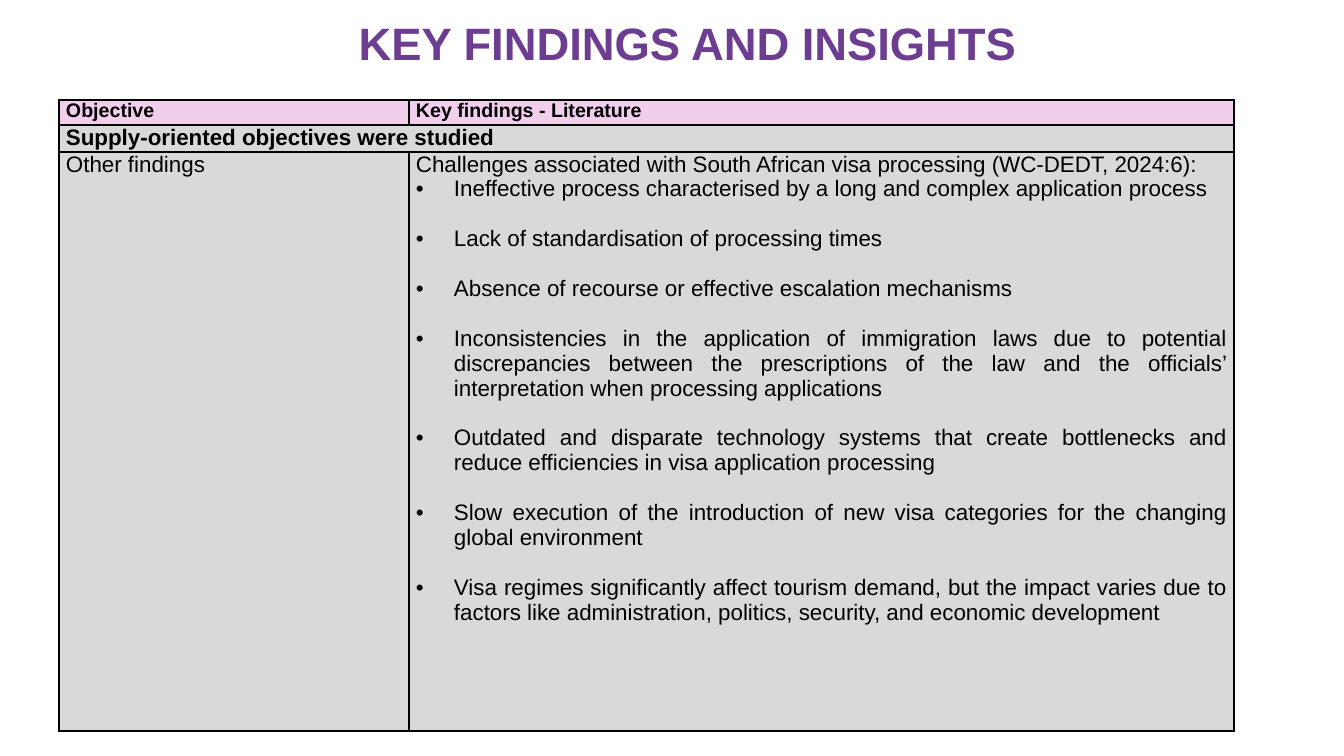
from pptx import Presentation
from pptx import util as u
from pptx.dml.color import RGBColor
from pptx.enum import text
from pptx.oxml.ns import qn
from lxml import etree

SCALE = 914400 / 100.8
COLORS = {"title": "6C3D91", "ink": "000000", "header": "F2CEED", "body": "D9D9D9"}
COLUMNS = [350, 825]
ROWS = [25, 27, 579]
BULLET_INDENT = 38
BULLET_GAP = 17.8
FINDINGS = [
    "Ineffective process characterised by a long and complex application process",
    "Lack of standardisation of processing times",
    "Absence of recourse or effective escalation mechanisms",
    "Inconsistencies in the application of immigration laws due to potential "
    "discrepancies between the prescriptions of the law and the officials’ "
    "interpretation when processing applications",
    "Outdated and disparate technology systems that create bottlenecks and "
    "reduce efficiencies in visa application processing",
    "Slow execution of the introduction of new visa categories for the changing "
    "global environment",
    "Visa regimes significantly affect tourism demand, but the impact varies due to "
    "factors like administration, politics, security, and economic development",
]


def px(n):
    return u.Emu(round(n * SCALE))


def apply(obj, values):
    for name, value in values.items():
        setattr(obj, name, value)


def write(p, words, size, color="ink", bold=False, align=text.PP_ALIGN.JUSTIFY):
    p.alignment = align
    r = p.add_run()
    r.text = words
    apply(r.font, {"name": "Arial", "size": u.Pt(size), "bold": bold})
    r.font.color.rgb = RGBColor.from_string(COLORS[color])


def add_bullet(p):
    pPr = p._p.get_or_add_pPr()
    pPr.set("marL", str(px(BULLET_INDENT)))
    pPr.set("indent", str(-px(BULLET_INDENT)))
    etree.SubElement(pPr, qn("a:buFont")).set("typeface", "Arial")
    etree.SubElement(pPr, qn("a:buChar")).set("char", "•")


def add_borders(cell):
    tcPr = cell._tc.get_or_add_tcPr()
    for side in ("lnL", "lnR", "lnT", "lnB"):
        ln = etree.SubElement(tcPr, qn(f"a:{side}"), w=str(u.Pt(1)))
        fill = etree.SubElement(ln, qn("a:solidFill"))
        etree.SubElement(fill, qn("a:srgbClr")).set("val", COLORS["ink"])


def format_cell(cell, fill):
    add_borders(cell)
    apply(cell, {"margin_left": px(7), "margin_right": px(7),
                 "margin_top": 0, "margin_bottom": 0})
    cell.fill.solid()
    cell.fill.fore_color.rgb = RGBColor.from_string(COLORS[fill])


def add_title(s, words):
    sp = s.shapes.title
    apply(sp, {"left": px(170), "top": px(19), "width": px(1035), "height": px(53)})
    tf = sp.text_frame
    apply(tf, {"margin_top": 0, "margin_bottom": 0, "word_wrap": True,
               "auto_size": text.MSO_AUTO_SIZE.NONE,
               "vertical_anchor": text.MSO_ANCHOR.MIDDLE})
    p = tf.paragraphs[0]
    p.line_spacing = 0.9
    write(p, words, 32.4, "title", True, text.PP_ALIGN.CENTER)


def add_findings_table(s):
    frame = s.shapes.add_table(len(ROWS), len(COLUMNS), px(59), px(100),
                               px(sum(COLUMNS)), px(sum(ROWS)))
    table = frame.table
    apply(table, {"first_row": False, "horz_banding": False})
    for column, width in zip(table.columns, COLUMNS):
        column.width = px(width)
    for i, (row, height) in enumerate(zip(table.rows, ROWS)):
        row.height = px(height)
        for cell in row.cells:
            format_cell(cell, "body" if i else "header")
    table.cell(1, 0).merge(table.cell(1, 1))
    entries = [
        (0, 0, "Objective", 14, True),
        (0, 1, "Key findings - Literature", 14, True),
        (1, 0, "Supply-oriented objectives were studied", 16, True),
        (2, 0, "Other findings", 16, False),
        (2, 1, "Challenges associated with South African visa processing "
               "(WC-DEDT, 2024:6):", 16, False),
    ]
    for row, column, words, size, bold in entries:
        write(table.cell(row, column).text_frame.paragraphs[0], words, size, bold=bold)
    tf = table.cell(2, 1).text_frame
    for i, finding in enumerate(FINDINGS):
        p = tf.add_paragraph()
        add_bullet(p)
        p.space_before = u.Pt(BULLET_GAP if i else 0)
        write(p, finding, 16)


def main():
    prs = Presentation()
    apply(prs, {"slide_width": px(1344), "slide_height": px(756)})
    s = prs.slides.add_slide(prs.slide_layouts[5])
    add_title(s, "KEY FINDINGS AND INSIGHTS")
    add_findings_table(s)
    prs.save("out.pptx")


if __name__ == "__main__":
    main()
